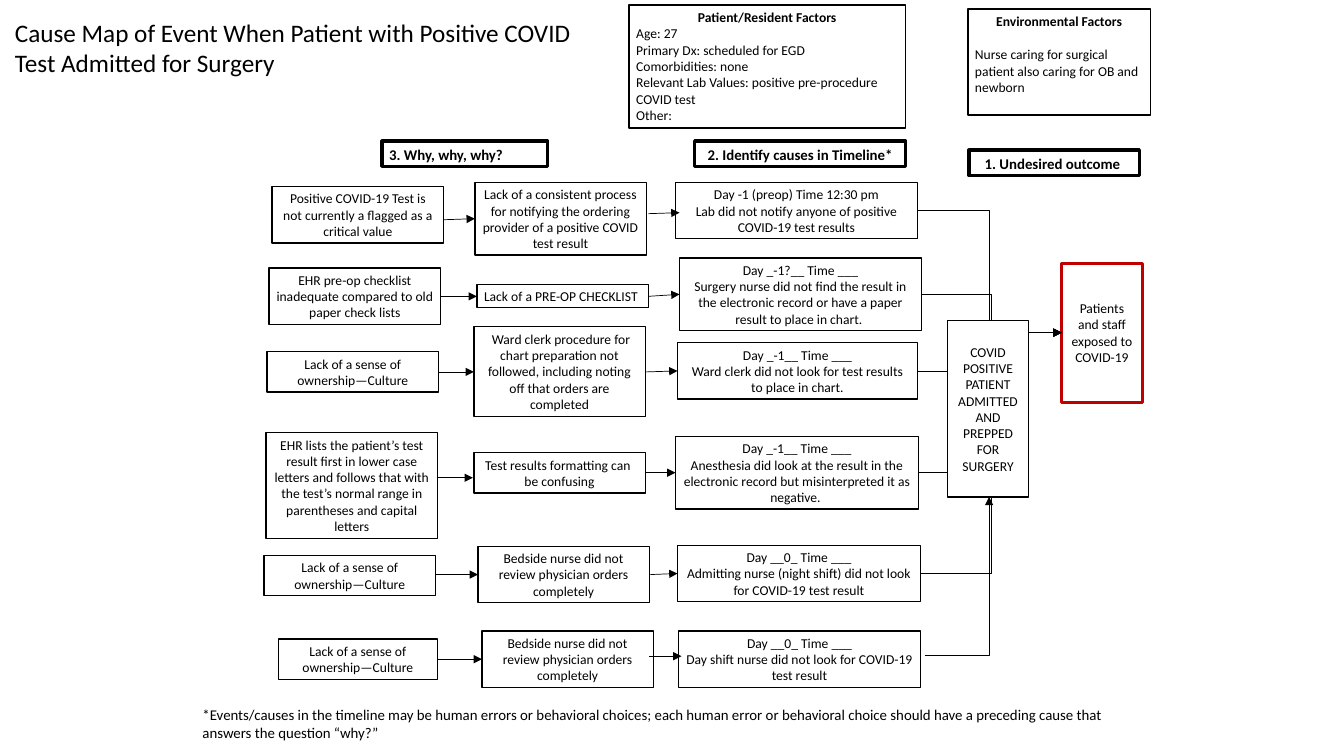
from lxml.etree import SubElement
from pptx import Presentation
from pptx.dml.color import RGBColor
from pptx.enum.shapes import MSO_CONNECTOR, MSO_SHAPE
from pptx.enum.text import MSO_ANCHOR, MSO_AUTO_SIZE, PP_ALIGN
from pptx.oxml.ns import qn
from pptx.util import Inches, Pt

BLACK = RGBColor(0, 0, 0)
WHITE = RGBColor(255, 255, 255)
RED = RGBColor(0xC0, 0, 0)
FONT = "Calibri"
BODY, HEADING, TITLE = 9.7, 10.6, 18
WHY_WIDTH, EVENT_WIDTH = 1.7, 2.4
OUTCOME_ENTRY = (10.53, 3.3)


def timeline(day, event, time="___"):
    """Return the two lines of a timeline event."""
    return [f"Day {day} Time {time}", event]


OWNERSHIP = ["Lack of a sense of ownership—Culture"]
BEDSIDE = ["Bedside nurse did not review physician orders completely"]

ROOT_CAUSES = [
    (2.7, 1.85, WHY_WIDTH, 0.56,
     ["Positive COVID-19 Test is not currently a flagged as a critical value"]),
    (2.67, 2.66, WHY_WIDTH, 0.56,
     ["EHR pre-op checklist inadequate compared to old paper check lists"]),
    (2.65, 3.49, WHY_WIDTH, 0.4, OWNERSHIP),
    (2.64, 4.29, WHY_WIDTH, 1.05,
     ["EHR lists the patient’s test result first in lower case letters and follows "
      "that with the test’s normal range in parentheses and capital letters"]),
    (2.62, 5.51, WHY_WIDTH, 0.4, OWNERSHIP),
    (2.76, 6.34, 1.58, 0.4, OWNERSHIP),
]
DIRECT_CAUSES = [
    (4.71, 1.81, WHY_WIDTH, 0.72,
     ["Lack of a consistent process for notifying the ordering provider of a "
      "positive COVID test result"]),
    (4.73, 2.82, WHY_WIDTH, 0.23, ["Lack of a PRE-OP CHECKLIST "]),
    (4.7, 3.24, WHY_WIDTH, 0.89,
     [" Ward clerk procedure for chart preparation not followed, including noting "
      "off that orders are completed"]),
    (4.7, 4.49, WHY_WIDTH, 0.4, ["Test results formatting can ", "be confusing"]),
    (4.74, 5.42, WHY_WIDTH, 0.56, BEDSIDE),
    (4.78, 6.26, WHY_WIDTH, 0.56, BEDSIDE),
]
EVENTS = [
    (6.7, 1.81, EVENT_WIDTH, 0.56, timeline(
        "-1 (preop)", "Lab did not notify anyone of positive COVID-19 test results",
        "12:30 pm")),
    (6.74, 2.56, EVENT_WIDTH, 0.72, timeline(
        "_-1?__", "Surgery nurse did not find the result in the electronic record "
        "or have a paper result to place in chart. ")),
    (6.72, 3.4, 2.38, 0.56, timeline(
        "_-1__", "Ward clerk did not look for test results to place in chart.")),
    (6.7, 4.33, 2.41, 0.72, timeline(
        "_-1__", "Anesthesia did look at the result in the electronic record but "
        "misinterpreted it as negative. ")),
    (6.72, 5.41, 2.41, 0.56, timeline(
        "__0_", "Admitting nurse (night shift) did not look for COVID-19 test result")),
    (6.73, 6.26, EVENT_WIDTH, 0.56, timeline(
        "__0_", "Day shift nurse did not look for COVID-19 test result")),
]
CAUSE_ARROWS = [
    (4.4, 2.18, 4.71, 2.17), (6.43, 2.12, 6.74, 2.11),
    (4.37, 2.94, 4.73, 2.94), (6.43, 2.94, 6.74, 2.92),
    (4.35, 3.69, 4.7, 3.69), (6.4, 3.69, 6.72, 3.68),
    (4.33, 4.74, 4.69, 4.74), (6.4, 4.69, 6.7, 4.69),
    (4.32, 5.7, 4.74, 5.7), (6.45, 5.7, 6.72, 5.69),
    (4.34, 6.54, 4.78, 6.54), (6.44, 6.51, 6.76, 6.51),
]
HEADINGS = [
    (3.79, 1.4, 1.64, 0.25, ["3. Why, why, why?"], PP_ALIGN.LEFT),
    (6.89, 1.4, 2.09, 0.25, ["2. Identify causes in Timeline*"], PP_ALIGN.CENTER),
    (9.61, 1.49, 1.69, 0.25, ["1. Undesired outcome "], PP_ALIGN.CENTER),
]


def write(frame, lines, size=BODY, bold=False, align=PP_ALIGN.CENTER):
    """Fill a text frame with one paragraph per line."""
    frame.word_wrap = True
    frame.text = "\n".join(lines)
    for paragraph in frame.paragraphs:
        paragraph.alignment = align
        paragraph.font.name = FONT
        paragraph.font.size = Pt(size)
        paragraph.font.bold = bold
        paragraph.font.color.rgb = BLACK


def add_frame(slide, left, top, width, height, kind=MSO_SHAPE.RECTANGLE,
              color=BLACK, weight=1.0):
    """Add a white outlined shape."""
    frame = slide.shapes.add_shape(
        kind, Inches(left), Inches(top), Inches(width), Inches(height))
    frame.shadow.inherit = False
    frame.fill.solid()
    frame.fill.fore_color.rgb = WHITE
    frame.line.color.rgb = color
    frame.line.width = Pt(weight)
    return frame


def add_card(slide, left, top, width, height, lines, size=BODY, bold=False,
             align=PP_ALIGN.CENTER, anchor=MSO_ANCHOR.MIDDLE, weight=1.0):
    """Add a tight-margined box and return its text frame."""
    text = add_frame(slide, left, top, width, height, weight=weight).text_frame
    text.margin_left = text.margin_right = Inches(0.07)
    text.margin_top = text.margin_bottom = Inches(0.04)
    text.vertical_anchor = anchor
    text.auto_size = MSO_AUTO_SIZE.SHAPE_TO_FIT_TEXT
    write(text, lines, size, bold, align)
    return text


def add_factors(slide, left, top, width, height, heading, facts):
    """Add a box with a bold centred heading above its facts."""
    text = add_card(slide, left, top, width, height, [heading, *facts],
                    align=PP_ALIGN.LEFT, anchor=MSO_ANCHOR.TOP)
    text.paragraphs[0].alignment = PP_ALIGN.CENTER
    text.paragraphs[0].font.bold = True
    return text


def add_stage(slide, left, top, width, height, label, color=BLACK, weight=1.0):
    """Add a process box of the final outcome chain."""
    stage = add_frame(slide, left, top, width, height,
                      MSO_SHAPE.FLOWCHART_PROCESS, color, weight)
    stage.text_frame.vertical_anchor = MSO_ANCHOR.MIDDLE
    write(stage.text_frame, [label])


def add_arrow(slide, x1, y1, x2, y2, kind=MSO_CONNECTOR.STRAIGHT):
    """Add a thin arrow pointing at its second end."""
    arrow = slide.shapes.add_connector(
        kind, Inches(x1), Inches(y1), Inches(x2), Inches(y2))
    arrow.line.color.rgb = BLACK
    arrow.line.width = Pt(0.5)
    properties = arrow._element.spPr
    SubElement(properties.find(qn("a:ln")), qn("a:tailEnd"), type="triangle")
    SubElement(properties, qn("a:effectLst"))
    return arrow


def add_note(slide, left, top, width, height, lines, size):
    """Add left-aligned text without a frame."""
    note = slide.shapes.add_textbox(
        Inches(left), Inches(top), Inches(width), Inches(height))
    write(note.text_frame, lines, size, align=PP_ALIGN.LEFT)


def main():
    """Build the cause map slide."""
    deck = Presentation()
    deck.slide_width, deck.slide_height = Inches(13.33), Inches(7.5)
    slide = deck.slides.add_slide(deck.slide_layouts[6])

    add_note(slide, 0.05, 0.12, 6.67, 0.71,
             ["Cause Map of Event When Patient with Positive COVID",
              "Test Admitted for Surgery"], TITLE)
    add_factors(slide, 6.24, 0.05, 2.74, 1.22, "Patient/Resident Factors",
                ["Age: 27", "Primary Dx: scheduled for EGD", "Comorbidities: none",
                 "Relevant Lab Values: positive pre-procedure COVID test", "Other:"])
    environment = add_factors(
        slide, 9.6, 0.09, 1.81, 1.05, "Environmental Factors",
        ["Nurse caring for surgical patient also caring for OB and newborn"])
    environment.paragraphs[1].space_before = Pt(12)

    for *place, lines, align in HEADINGS:
        add_card(slide, *place, lines, HEADING, True, align, MSO_ANCHOR.TOP, 2.5)
    for card in ROOT_CAUSES + DIRECT_CAUSES + EVENTS:
        add_card(slide, *card)

    add_stage(slide, 10.53, 2.61, 0.8, 1.38,
              "Patients and staff exposed to COVID-19", RED, 2.25)
    for left, top, width, height, _ in EVENTS[:-1]:
        add_arrow(slide, left + width, top + height / 2, *OUTCOME_ENTRY,
                  MSO_CONNECTOR.ELBOW)
    add_stage(slide, 9.4, 3.18, 0.8, 1.75,
              "COVID POSITIVE PATIENT ADMITTED AND PREPPED FOR SURGERY")
    for ends in CAUSE_ARROWS:
        add_arrow(slide, *ends)
    day_shift = add_arrow(slide, 9.17, 6.5, 9.81, 4.93, MSO_CONNECTOR.ELBOW)
    day_shift._element.spPr.find(qn("a:prstGeom")).set("prst", "bentConnector2")

    add_note(slide, 1.91, 6.95, 9.61, 0.46,
             ["*Events/causes in the timeline may be human errors or behavioral "
              "choices; each human error or behavioral choice should have a preceding "
              "cause that answers the question “why?”"], HEADING)
    deck.save("out.pptx")


if __name__ == "__main__":
    main()
